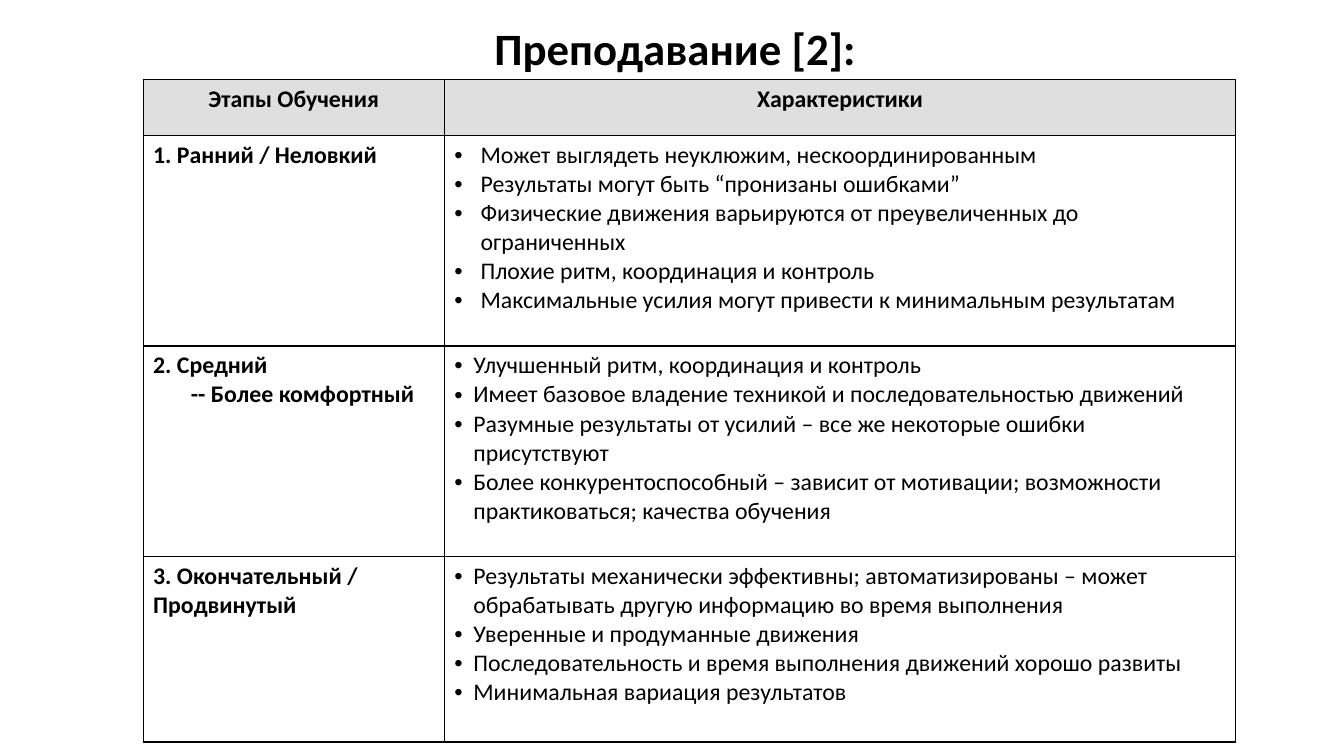
from lxml import etree
from pptx import Presentation
from pptx.dml.color import RGBColor
from pptx.enum.text import MSO_ANCHOR, PP_ALIGN
from pptx.oxml.ns import qn
from pptx.util import Cm, Pt

CENTER = PP_ALIGN.CENTER
LEFT = PP_ALIGN.LEFT
MIDDLE = MSO_ANCHOR.MIDDLE
FONT = "Calibri"
BLACK, WHITE, GRAY = "000000", "FFFFFF", "DFDFDF"

COLS = [7.59, 19.94]
ROWS = [1.4, 5.31, 5.31, 4.67]
HEADS = ["Этапы Обучения", "Характеристики"]
# Each stage: name, indented note, bullet indent in cm, traits
STAGES = [
    ("1. Ранний / Неловкий", None, 0.66, [
        "Может выглядеть неуклюжим, нескоординированным",
        "Результаты могут быть “пронизаны ошибками”",
        "Физические движения варьируются от преувеличенных до ограниченных",
        "Плохие ритм, координация и контроль",
        "Максимальные усилия могут привести к минимальным результатам",
    ]),
    ("2. Средний", "-- Более комфортный", 0.48, [
        "Улучшенный ритм, координация и контроль",
        "Имеет базовое владение техникой и последовательностью движений",
        "Разумные результаты от усилий – все же некоторые ошибки присутствуют",
        "Более конкурентоспособный – зависит от мотивации; "
        "возможности практиковаться; качества обучения",
    ]),
    ("3. Окончательный / Продвинутый", None, 0.48, [
        "Результаты механически эффективны; автоматизированы – может "
        "обрабатывать другую информацию во время выполнения",
        "Уверенные и продуманные движения",
        "Последовательность и время выполнения движений хорошо развиты",
        "Минимальная вариация результатов",
    ]),
]


def color(code):
    return RGBColor.from_string(code)


def add_run(para, text, size=17, bold=False):
    run = para.add_run()
    run.text = text
    font = run.font
    font.name, font.size, font.bold = FONT, Pt(size), bold
    font.color.rgb = color(BLACK)


def next_para(frame):
    """Return the first paragraph while it is empty, else a new one."""
    first = frame.paragraphs[0]
    return frame.add_paragraph() if first.runs else first


def add_label(frame, text, align=LEFT, indent=0):
    para = next_para(frame)
    para.alignment = align
    if indent:
        para._p.get_or_add_pPr().set("marL", str(Cm(indent)))
    add_run(para, text, bold=True)


def add_bullet(frame, text, indent):
    para = next_para(frame)
    props = para._p.get_or_add_pPr()
    props.set("marL", str(Cm(indent)))
    props.set("indent", str(-Cm(indent)))
    etree.SubElement(props, qn("a:buFont"), typeface="Arial")
    etree.SubElement(props, qn("a:buChar"), char="•")
    add_run(para, text)


def style_cell(cell, fill):
    cell.fill.solid()
    cell.fill.fore_color.rgb = color(fill)
    cell.margin_left = cell.margin_right = Cm(0.25)
    cell.margin_top = cell.margin_bottom = Cm(0.13)
    props = cell._tc.get_or_add_tcPr()
    for spot, side in enumerate(("lnL", "lnR", "lnT", "lnB")):
        line = etree.Element(qn("a:" + side), w=str(Pt(1)))
        paint = etree.SubElement(line, qn("a:solidFill"))
        etree.SubElement(paint, qn("a:srgbClr"), val=BLACK)
        props.insert(spot, line)


def add_title(slide, text):
    box = slide.shapes.add_textbox(Cm(4.32), Cm(0.38), Cm(25.4), Cm(1.63))
    frame = box.text_frame
    frame.word_wrap = True
    frame.vertical_anchor = MIDDLE
    para = frame.paragraphs[0]
    para.alignment = CENTER
    add_run(para, text, size=32, bold=True)


def add_grid(slide):
    table = slide.shapes.add_table(
        len(ROWS), len(COLS), Cm(3.61), Cm(2.01),
        Cm(sum(COLS)), Cm(sum(ROWS))).table
    for col, width in zip(table.columns, COLS):
        col.width = Cm(width)
    for row, height in zip(table.rows, ROWS):
        row.height = Cm(height)
    for num, row in enumerate(table.rows):
        for cell in row.cells:
            style_cell(cell, WHITE if num else GRAY)
    return table


def fill_stage(row, name, note, indent, traits):
    left, right = [cell.text_frame for cell in row.cells]
    add_label(left, name)
    if note:
        add_label(left, note, indent=0.95)
    for trait in traits:
        add_bullet(right, trait, indent)


def main():
    deck = Presentation()
    deck.slide_width, deck.slide_height = Cm(33.87), Cm(19.05)
    slide = deck.slides.add_slide(deck.slide_layouts[6])
    add_title(slide, "Преподавание [2]:")
    table = add_grid(slide)
    for cell, head in zip(table.rows[0].cells, HEADS):
        add_label(cell.text_frame, head, CENTER)
    for num, stage in enumerate(STAGES, 1):
        fill_stage(table.rows[num], *stage)
    deck.save("out.pptx")


if __name__ == "__main__":
    main()
